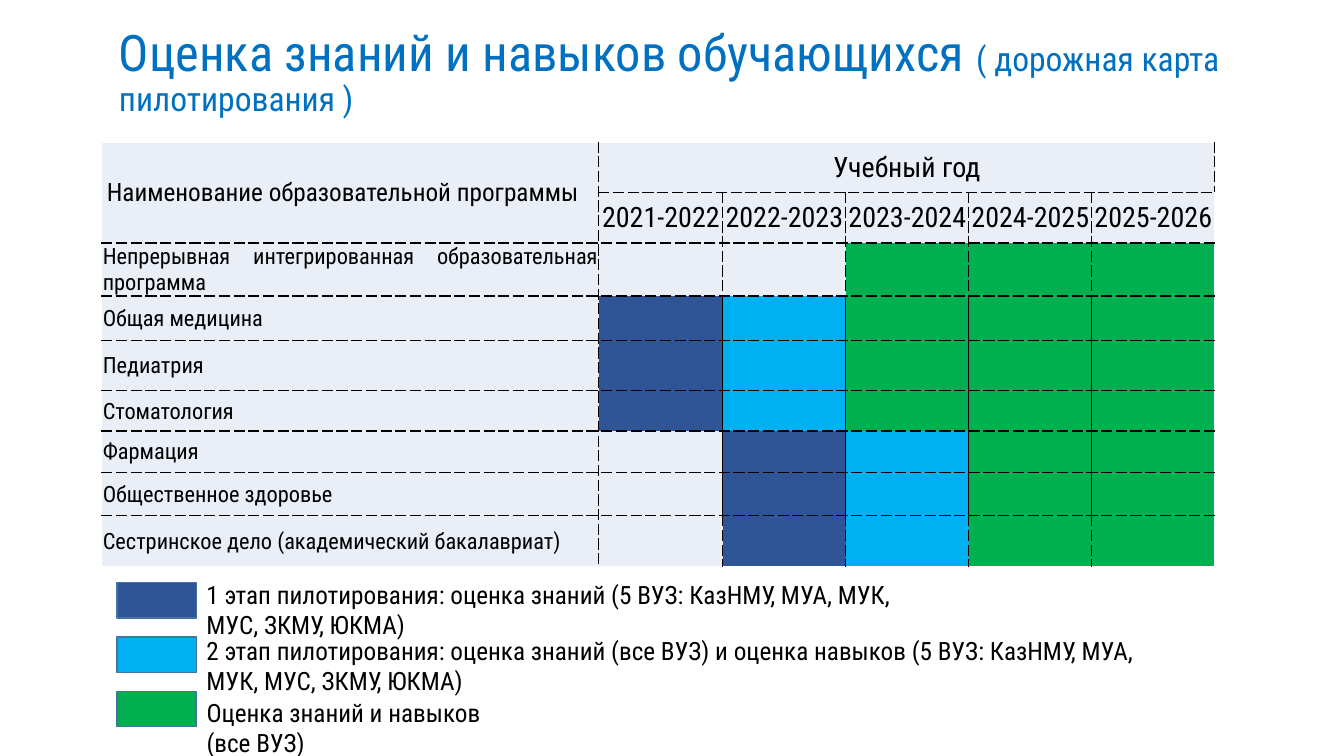
from dataclasses import dataclass

from lxml import etree
from pptx import Presentation
from pptx.dml.color import RGBColor
from pptx.enum.shapes import MSO_SHAPE
from pptx.enum.text import MSO_ANCHOR, MSO_AUTO_SIZE, PP_ALIGN
from pptx.oxml.ns import qn
from pptx.util import Emu, Pt

RECTANGLE = MSO_SHAPE.RECTANGLE
MIDDLE = MSO_ANCHOR.MIDDLE
LEFT, CENTER, JUSTIFY = PP_ALIGN.LEFT, PP_ALIGN.CENTER, PP_ALIGN.JUSTIFY
FIXED, GROW = MSO_AUTO_SIZE.NONE, MSO_AUTO_SIZE.SHAPE_TO_FIT_TEXT

EMU_PER_PX = 9144  # 100 px to the inch
TITLE_ONLY = 5


@dataclass(frozen=True)
class Theme:
    font: str = "Roboto Condensed"
    title: str = "0070C0"
    text: str = "000000"
    pale: str = "EAEFF7"
    stage_1: str = "2F5597"
    stage_2: str = "00B0F0"
    full: str = "00B050"
    outer_edge: str = "FFFFFF"
    swatch_edge: str = "43739E"
    title_size: int = 36
    subtitle_size: int = 24
    year_size: int = 20
    label_size: int = 18
    program_size: int = 16


THEME = Theme()

# Roadmap: one letter per academic year
STAGE_FILLS = {"-": THEME.pale, "1": THEME.stage_1, "2": THEME.stage_2, "3": THEME.full}
YEARS = ["2021-2022", "2022-2023", "2023-2024", "2024-2025", "2025-2026"]
PROGRAMS = [
    ("Непрерывная интегрированная образовательная программа", "--333"),
    ("Общая медицина", "12333"),
    ("Педиатрия", "12333"),
    ("Стоматология", "12333"),
    ("Фармация", "-1233"),
    ("Общественное здоровье", "-1233"),
    ("Сестринское дело (академический бакалавриат)", "-1233"),
]
COLUMN_WIDTHS = [493, 123, 122, 122, 122, 122]
ROW_HEIGHTS = [50, 50, 43, 44, 50, 40, 41, 43, 50]
SOLID_EDGE_ROWS = range(3, 8)

# Legend: colour, label, label top, label width
LEGEND = [
    (THEME.stage_1, "1 этап пилотирования: оценка знаний (5 ВУЗ: КазНМУ, МУА, МУК, "
     "МУС, ЗКМУ, ЮКМА)", 570, 723),
    (THEME.stage_2, "2 этап пилотирования: оценка знаний (все ВУЗ) и оценка навыков "
     "(5 ВУЗ: КазНМУ, МУА, МУК, МУС, ЗКМУ, ЮКМА)", 625, 983),
    (THEME.full, "Оценка знаний и навыков (все ВУЗ)", 687, 321),
]
SWATCH_TOP, SWATCH_STEP = 578, 54


def px(length):
    return Emu(length * EMU_PER_PX)


class SlideBuilder:
    def __init__(self, slide, theme):
        self.slide = slide
        self.theme = theme

    def style(self, run, size, color):
        run.font.name = self.theme.font
        run.font.size = Pt(size)
        run.font.color.rgb = RGBColor.from_string(color)

    def title(self, main, detail, left, top, width, height):
        heading = self.slide.shapes.title
        heading.left, heading.top = px(left), px(top)
        heading.width, heading.height = px(width), px(height)
        frame = heading.text_frame
        frame.text = main
        frame.word_wrap = True
        frame.auto_size = FIXED
        frame.vertical_anchor = MIDDLE
        line = frame.paragraphs[0]
        line.alignment = LEFT
        line.line_spacing = 0.9
        line.add_run().text = detail
        sizes = (self.theme.title_size, self.theme.subtitle_size)
        for run, size in zip(line.runs, sizes):
            self.style(run, size, self.theme.title)

    def swatch(self, color, left, top, width, height):
        box = self.slide.shapes.add_shape(RECTANGLE, px(left), px(top), px(width), px(height))
        box.shadow.inherit = False
        box.fill.solid()
        box.fill.fore_color.rgb = RGBColor.from_string(color)
        box.line.color.rgb = RGBColor.from_string(self.theme.swatch_edge)
        box.line.width = Pt(1)

    def label(self, wording, left, top, width, height):
        frame = self.slide.shapes.add_textbox(px(left), px(top), px(width), px(height)).text_frame
        frame.text = wording
        frame.word_wrap = True
        frame.auto_size = GROW
        self.style(frame.paragraphs[0].runs[0], self.theme.label_size, self.theme.text)

    def table(self, left, top, widths, heights):
        frame = self.slide.shapes.add_table(
            len(heights), len(widths), px(left), px(top), px(sum(widths)), px(sum(heights)))
        grid = frame.table
        grid.first_row = grid.horz_banding = False
        for column, width in zip(grid.columns, widths):
            column.width = px(width)
        for row, height in zip(grid.rows, heights):
            row.height = px(height)
        return grid

    def cell(self, cell, fill, wording="", size=16, align=LEFT, indent=1):
        cell.margin_left, cell.margin_right = px(indent), px(1)
        cell.margin_top, cell.margin_bottom = px(1), px(0)
        cell.vertical_anchor = MIDDLE
        cell.fill.solid()
        cell.fill.fore_color.rgb = RGBColor.from_string(fill)
        if wording:
            cell.text = wording
            line = cell.text_frame.paragraphs[0]
            line.alignment = align
            self.style(line.runs[0], size, self.theme.text)

    def borders(self, cell, edges):
        """Takes (colour, dash) for the left, right, top and bottom edges."""
        properties = cell._tc.get_or_add_tcPr()
        for place, (side, (color, dash)) in enumerate(zip("LRTB", edges)):
            line = etree.Element(qn(f"a:ln{side}"), w=str(Pt(1)))
            paint = etree.SubElement(line, qn("a:solidFill"))
            etree.SubElement(paint, qn("a:srgbClr"), val=color)
            etree.SubElement(line, qn("a:prstDash"), val=dash)
            properties.insert(place, line)


def horizontal_edge(index):
    if index in (0, len(ROW_HEIGHTS)):
        return THEME.outer_edge, "solid"
    return THEME.text, "lgDash"


def vertical_edge(index, row):
    if index in (0, len(COLUMN_WIDTHS)):
        return THEME.outer_edge, "solid"
    solid = index > 1 and row in SOLID_EDGE_ROWS
    return THEME.text, "solid" if solid else "lgDash"


def main():
    deck = Presentation()
    deck.slide_width, deck.slide_height = px(1333), px(750)
    builder = SlideBuilder(deck.slides.add_slide(deck.slide_layouts[TITLE_ONLY]), THEME)

    builder.title("Оценка знаний и навыков обучающихся ",
                  "( дорожная карта пилотирования )", 108, 0, 1150, 145)

    # Table header
    roadmap = builder.table(101, 141, COLUMN_WIDTHS, ROW_HEIGHTS)
    roadmap.cell(0, 0).merge(roadmap.cell(1, 0))
    roadmap.cell(0, 1).merge(roadmap.cell(0, len(YEARS)))
    builder.cell(roadmap.cell(0, 0), THEME.pale, "Наименование образовательной программы",
                 THEME.label_size, indent=5)
    builder.cell(roadmap.cell(0, 1), THEME.pale, "Учебный год", THEME.year_size, CENTER)
    for column, year in enumerate(YEARS, 1):
        builder.cell(roadmap.cell(1, column), THEME.pale, year, THEME.year_size, CENTER)

    # Programmes and their stages
    for row, (program, stages) in enumerate(PROGRAMS, 2):
        builder.cell(roadmap.cell(row, 0), THEME.pale, program, THEME.program_size, JUSTIFY)
        for column, stage in enumerate(stages, 1):
            builder.cell(roadmap.cell(row, column), STAGE_FILLS[stage])

    # Table rules
    for row in range(len(ROW_HEIGHTS)):
        for column in range(len(COLUMN_WIDTHS)):
            builder.borders(roadmap.cell(row, column), [
                vertical_edge(column, row), vertical_edge(column + 1, row),
                horizontal_edge(row), horizontal_edge(row + 1)])

    # Legend
    for index, (color, wording, top, width) in enumerate(LEGEND):
        builder.swatch(color, 116, SWATCH_TOP + index * SWATCH_STEP, 79, 35)
        builder.label(wording, 195, top, width, 40)

    deck.save("out.pptx")


if __name__ == "__main__":
    main()
